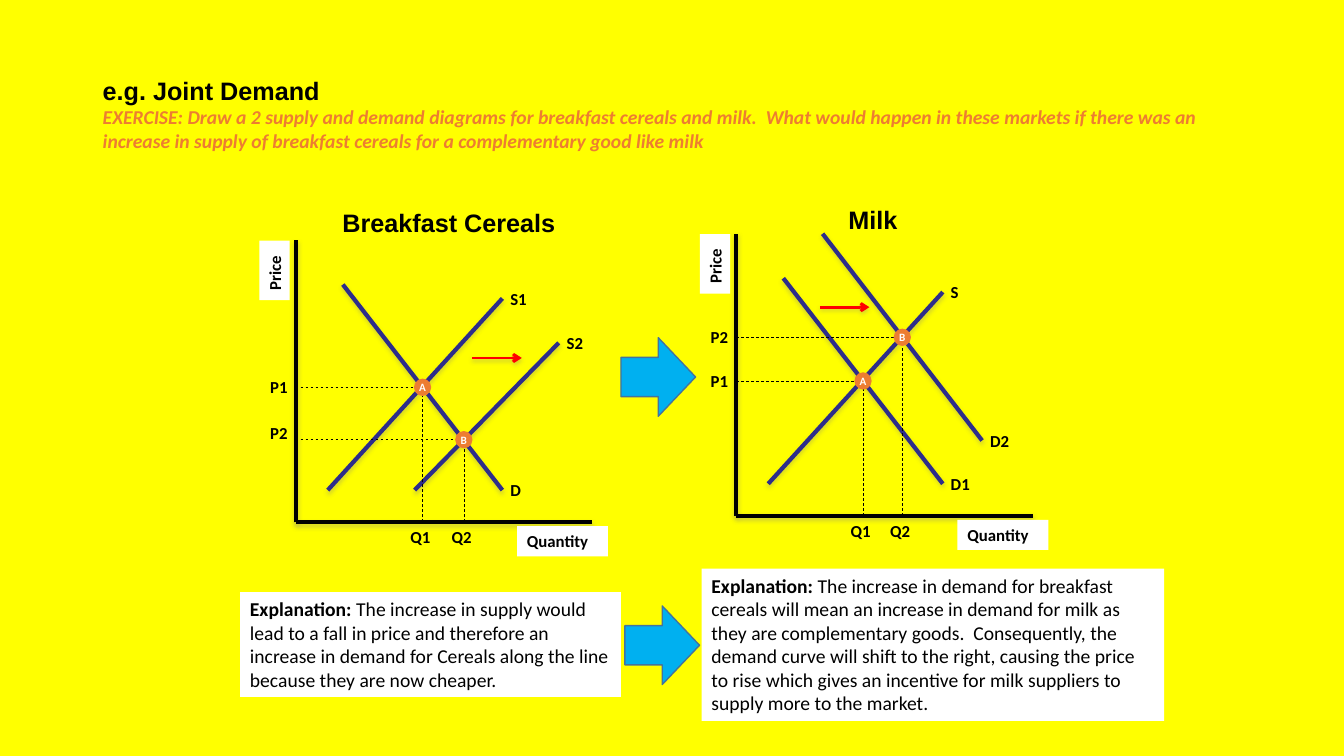
from dataclasses import dataclass

from lxml import etree
from pptx import Presentation
from pptx.dml.color import RGBColor
from pptx.enum.dml import MSO_LINE
from pptx.enum.shapes import MSO_CONNECTOR, MSO_SHAPE
from pptx.enum.text import MSO_ANCHOR, MSO_AUTO_SIZE, PP_ALIGN
from pptx.oxml.ns import qn
from pptx.util import Cm, Pt

STRAIGHT = MSO_CONNECTOR.STRAIGHT
RECTANGLE, OVAL, RIGHT_ARROW = MSO_SHAPE.RECTANGLE, MSO_SHAPE.OVAL, MSO_SHAPE.RIGHT_ARROW
DASH = MSO_LINE.DASH
TOP, MIDDLE = MSO_ANCHOR.TOP, MSO_ANCHOR.MIDDLE
LEFT, CENTER = PP_ALIGN.LEFT, PP_ALIGN.CENTER
GROW, FIXED = MSO_AUTO_SIZE.SHAPE_TO_FIT_TEXT, MSO_AUTO_SIZE.NONE

YELLOW, WHITE, BLACK = "FFFF00", "FFFFFF", "000000"
ORANGE, NAVY, RED = "ED7D31", "2D2D8A", "FF0000"
SKY, STEEL = "00B0F0", "43739E"

# Sizes shared by both diagrams, in cm
AXIS_WIDTH, AXIS_HEIGHT = 7.48, 7.11
LABEL_WIDTH, LABEL_HEIGHT = 1.14, 0.76
DOT = 0.4
SHIFT_LENGTH = 1.25

Point = tuple[float, float]


@dataclass
class Curve:
    name: str
    start: Point
    end: Point


@dataclass
class Equilibrium:
    name: str
    number: int
    at: Point
    price_lift: float = 0


@dataclass
class Market:
    """Origin is on the slide; all other points run right and up from it."""
    heading: str
    heading_left: float
    heading_top: float
    heading_width: float
    origin: Point
    curves: list[Curve]
    equilibria: list[Equilibrium]
    shift: Point


@dataclass
class Explanation:
    left: float
    top: float
    width: float
    height: float
    text: str


DEMAND = (1.19, 5.99), (5.21, 0.81)
SUPPLY = (0.81, 0.81), (5.21, 5.64)
MARKETS = [
    Market("Breakfast Cereals", 8.38, 5.1, 5.92, (7.45, 13.16),
           [Curve("D", *DEMAND), Curve("S1", *SUPPLY), Curve("S2", (3, 0.81), (6.63, 4.52))],
           [Equilibrium("A", 1, (3.2, 3.4)), Equilibrium("B", 2, (4.24, 2.08), 0.18)],
           (4.45, 4.14)),
    Market("Milk", 21.13, 5.03, 1.75, (18.55, 13),
           [Curve("D1", *DEMAND), Curve("S", *SUPPLY), Curve("D2", (2.18, 7.11), (6.2, 1.9))],
           [Equilibrium("A", 1, (3.2, 3.4)), Equilibrium("B", 2, (4.19, 4.5))],
           (2.11, 5.26)),
]
EXPLANATIONS = [
    Explanation(6.05, 14.92, 9.6, 2.64,
                "The increase in supply would lead to a fall in price and therefore an increase "
                "in demand for Cereals along the line because they are now cheaper."),
    Explanation(17.68, 14.33, 11.66, 3.84,
                "The increase in demand for breakfast cereals will mean an increase in demand for "
                "milk as they are complementary goods.  Consequently, the demand curve will shift "
                "to the right, causing the price to rise which gives an incentive for milk "
                "suppliers to supply more to the market."),
]
FLOW_ARROWS = [(15.65, 8.51), (15.75, 15.27)]


def color(value: str) -> RGBColor:
    return RGBColor.from_string(value)


def write(frame, text: str, *, size=12, font="Calibri", ink=BLACK, bold=True, italic=False):
    """Add a run to the frame's first paragraph."""
    run = frame.paragraphs[0].add_run()
    run.text = text
    run.font.size, run.font.name = Pt(size), font
    run.font.bold, run.font.italic = bold, italic
    run.font.color.rgb = color(ink)


def add_box(slide, left: float, top: float, width: float, height: float, *,
            fill: str = "", wrap=True, auto_size=GROW):
    """Left-aligned text area, as a filled rectangle if a fill is given."""
    place = Cm(left), Cm(top), Cm(width), Cm(height)
    if fill:
        box = add_solid(slide, RECTANGLE, place, fill)
    else:
        box = slide.shapes.add_textbox(*place)
    frame = box.text_frame
    frame.word_wrap, frame.auto_size = wrap, auto_size
    frame.vertical_anchor = TOP
    frame.paragraphs[0].alignment = LEFT
    return box


def add_solid(slide, kind, place, fill: str, outline: str = ""):
    shape = slide.shapes.add_shape(kind, *place)
    shape.shadow.inherit = False
    shape.fill.solid()
    shape.fill.fore_color.rgb = color(fill)
    if outline:
        shape.line.color.rgb = color(outline)
        shape.line.width = Pt(1)
    else:
        shape.line.fill.background()
    return shape


def add_line(slide, start: Point, end: Point, ink: str, width: float, *,
             dashed=False, arrow=False, shadow=True):
    line = slide.shapes.add_connector(STRAIGHT, *map(Cm, start + end))
    line.line.color.rgb = color(ink)
    line.line.width = Pt(width)
    if dashed:
        line.line.dash_style = DASH
    properties = line._element.spPr
    if arrow:
        etree.SubElement(properties.find(qn("a:ln")), qn("a:tailEnd"), type="arrow")
    effects = etree.SubElement(properties, qn("a:effectLst"))
    if shadow:
        outer = etree.SubElement(effects, qn("a:outerShdw"), blurRad=str(Pt(3.1)),
                                 dist=str(Pt(1.8)), dir="5400000", rotWithShape="0")
        shade = etree.SubElement(outer, qn("a:srgbClr"), val="808080")
        etree.SubElement(shade, qn("a:alpha"), val="35000")


def draw_market(slide, market: Market):
    origin_x, origin_y = market.origin

    def place(point: Point) -> Point:
        return origin_x + point[0], origin_y - point[1]

    heading = add_box(slide, market.heading_left, market.heading_top,
                      market.heading_width, 1.02, wrap=False)
    write(heading.text_frame, market.heading, size=18, font="Arial")

    # Axes and their titles
    for tip in [(0, AXIS_HEIGHT), (AXIS_WIDTH, 0)]:
        add_line(slide, market.origin, place(tip), BLACK, 3)
    price = add_box(slide, origin_x - 1.28, origin_y - 6.73, 1.5, LABEL_HEIGHT,
                    fill=WHITE, wrap=False)
    price.rotation = 270
    write(price.text_frame, "Price")
    quantity = add_box(slide, origin_x + 5.58, origin_y + 0.1, 2.29, LABEL_HEIGHT,
                       fill=WHITE, wrap=False)
    write(quantity.text_frame, "Quantity")

    # Curves, each named at its end
    for curve in market.curves:
        add_line(slide, place(curve.start), place(curve.end), NAVY, 3)
        end_x, end_y = place(curve.end)
        label = add_box(slide, end_x - 0.05, end_y - LABEL_HEIGHT / 2, LABEL_WIDTH, LABEL_HEIGHT)
        write(label.text_frame, curve.name)

    # Equilibrium points with guides to both axes
    for point in market.equilibria:
        x, y = place(point.at)
        add_line(slide, (origin_x, y), (x, y), BLACK, 0.5, dashed=True, shadow=False)
        add_line(slide, (x, origin_y), (x, y + DOT / 2), BLACK, 0.5, dashed=True, shadow=False)
        dot = add_solid(slide, OVAL, (Cm(x - DOT / 2), Cm(y - DOT / 2), Cm(DOT), Cm(DOT)),
                        ORANGE, ORANGE)
        frame = dot.text_frame
        frame.margin_left = frame.margin_right = frame.margin_top = frame.margin_bottom = 0
        frame.word_wrap, frame.vertical_anchor = False, MIDDLE
        frame.paragraphs[0].alignment = CENTER
        write(frame, point.name, size=8, ink=WHITE)
        price_top = y - LABEL_HEIGHT / 2 - point.price_lift
        for letter, left, top in [("P", origin_x - 0.89, price_top), ("Q", x - 0.56, origin_y)]:
            label = add_box(slide, left, top, LABEL_WIDTH, LABEL_HEIGHT)
            write(label.text_frame, f"{letter}{point.number}")

    # Direction of the shift
    x, y = place(market.shift)
    add_line(slide, (x, y), (x + SHIFT_LENGTH, y), RED, 2, arrow=True)


def main():
    deck = Presentation()
    deck.slide_width, deck.slide_height = Cm(33.87), Cm(19.05)
    slide = deck.slides.add_slide(deck.slide_layouts[6])
    slide.background.fill.solid()
    slide.background.fill.fore_color.rgb = color(YELLOW)

    # Title and exercise
    title = add_box(slide, 2.34, 1.02, 29.21, 3.68, auto_size=FIXED).text_frame
    title.vertical_anchor = MIDDLE
    write(title, "e.g. Joint Demand", size=18, font="Arial")
    title.paragraphs[0].add_line_break()
    write(title, "EXERCISE: Draw a 2 supply and demand diagrams for breakfast cereals and milk.  "
          "What would happen in these markets if there was an increase in supply of breakfast "
          "cereals for a complementary good like milk", size=14, ink=ORANGE, italic=True)

    for market in MARKETS:
        draw_market(slide, market)

    # Explanations and the arrows between the two markets
    for note in EXPLANATIONS:
        frame = add_box(slide, note.left, note.top, note.width, note.height, fill=WHITE).text_frame
        write(frame, "Explanation: ", size=14)
        write(frame, note.text, size=14, bold=False)
    for left, top in FLOW_ARROWS:
        add_solid(slide, RIGHT_ARROW, (Cm(left), Cm(top), Cm(1.88), Cm(1.98)), SKY, STEEL)

    deck.save("out.pptx")


if __name__ == "__main__":
    main()
